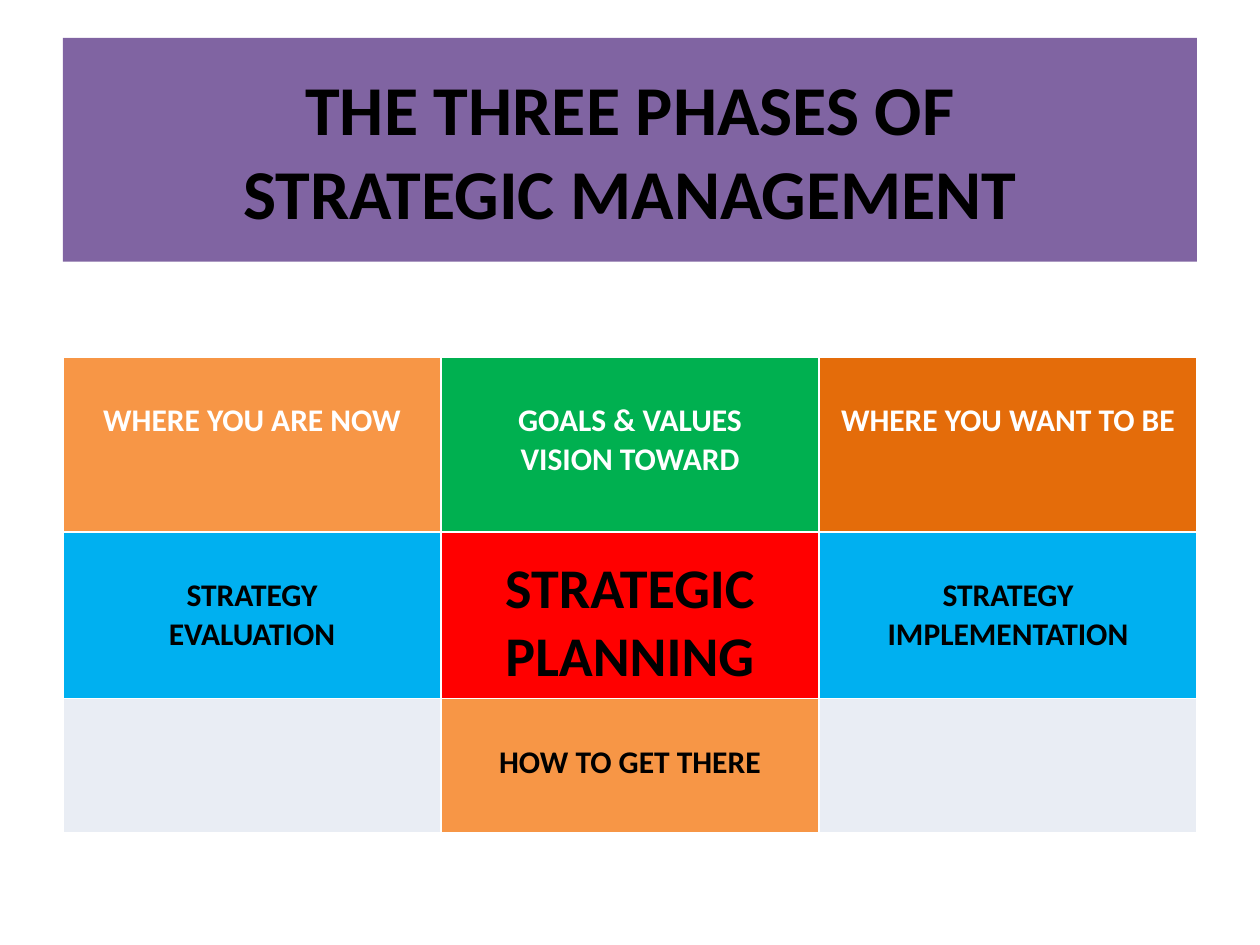
import dataclasses

import pptx
import pptx.dml.color
import pptx.enum.shapes
import pptx.enum.text
import pptx.util

Pt = pptx.util.Pt

COLORS = {
    "purple": "8064A2",
    "orange": "F79646",
    "green": "00B050",
    "rust": "E46C0A",
    "blue": "00B0F0",
    "red": "FF0000",
    "gray": "E9EDF4",
    "white": "FFFFFF",
    "black": "000000",
}
FONT = "Calibri"
MARGIN = 36
WIDTH = 648
ROW_HEIGHTS = [100, 95, 77]


@dataclasses.dataclass
class Phase:
    text: str
    fill: str
    color: str = "black"
    size: float = 18
    top: float = 25.6


PHASES = [
    [
        Phase("WHERE YOU ARE NOW", "orange", "white"),
        Phase("GOALS & VALUES\nVISION TOWARD", "green", "white"),
        Phase("WHERE YOU WANT TO BE", "rust", "white"),
    ],
    [
        Phase("STRATEGY\nEVALUATION", "blue"),
        Phase("STRATEGIC\nPLANNING", "red", size=32, top=13.2),
        Phase("STRATEGY IMPLEMENTATION", "blue"),
    ],
    [
        Phase("", "gray"),
        Phase("HOW TO GET THERE", "orange"),
        Phase("", "gray"),
    ],
]


def rgb(name: str) -> pptx.dml.color.RGBColor:
    return pptx.dml.color.RGBColor.from_string(COLORS[name])


def write(tf, text: str, size: float, color: str) -> None:
    tf.text = text
    for p in tf.paragraphs:
        p.alignment = pptx.enum.text.PP_ALIGN.CENTER
        p.font.name = FONT
        p.font.size = Pt(size)
        p.font.bold = True
        p.font.color.rgb = rgb(color)


def draw_title(s, text: str) -> None:
    sp = s.shapes.add_shape(
        pptx.enum.shapes.MSO_SHAPE.RECTANGLE,
        Pt(MARGIN), Pt(21.6), Pt(WIDTH), Pt(128),
    )
    sp.shadow.inherit = False
    sp.fill.solid()
    sp.fill.fore_color.rgb = rgb("purple")
    sp.line.fill.background()
    sp.text_frame.vertical_anchor = pptx.enum.text.MSO_ANCHOR.MIDDLE
    write(sp.text_frame, text, 40, "black")


def draw_cell(cell, phase: Phase) -> None:
    cell.fill.solid()
    cell.fill.fore_color.rgb = rgb(phase.fill)
    cell.margin_top = Pt(phase.top)
    write(cell.text_frame, phase.text, phase.size, phase.color)


def draw_phases(s, phases: list[list[Phase]]) -> None:
    table = s.shapes.add_table(
        len(phases), len(phases[0]),
        Pt(MARGIN), Pt(204), Pt(WIDTH), Pt(sum(ROW_HEIGHTS)),
    ).table
    for row, height, row_phases in zip(table.rows, ROW_HEIGHTS, phases):
        row.height = Pt(height)
        for cell, phase in zip(row.cells, row_phases):
            draw_cell(cell, phase)


def main() -> None:
    prs = pptx.Presentation()
    prs.slide_width, prs.slide_height = Pt(720), Pt(540)
    s = prs.slides.add_slide(prs.slide_layouts[6])
    draw_title(s, "THE THREE PHASES OF\vSTRATEGIC MANAGEMENT")
    draw_phases(s, PHASES)
    prs.save("out.pptx")


if __name__ == "__main__":
    main()
